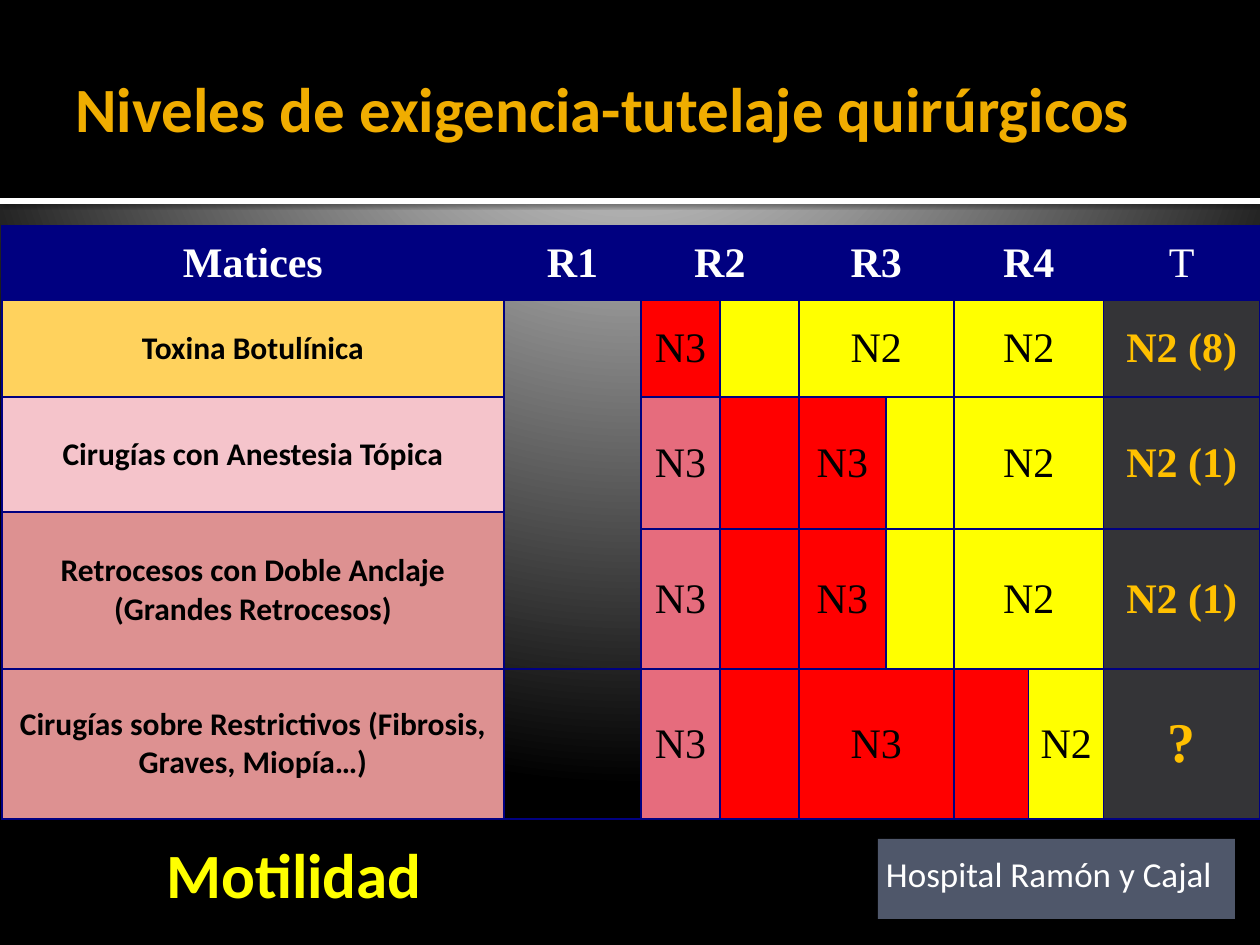
"""Build a slide with the table of surgical supervision levels by residency year."""
import pptx
import pptx.dml.color
import pptx.enum.shapes
import pptx.enum.text
import pptx.oxml
import pptx.oxml.ns
import pptx.util

RGB = pptx.dml.color.RGBColor
BLACK = RGB(0x00, 0x00, 0x00)
WHITE = RGB(0xFF, 0xFF, 0xFF)
GOLD = RGB(0xF0, 0xAD, 0x00)
AMBER = RGB(0xFF, 0xC0, 0x00)
YELLOW = RGB(0xFF, 0xFF, 0x00)
RED = RGB(0xFF, 0x00, 0x00)
ROSE = RGB(0xE6, 0x6C, 0x7D)
NAVY = RGB(0x00, 0x00, 0x80)
SAND = RGB(0xFF, 0xD2, 0x5D)
PINK = RGB(0xF5, 0xC4, 0xCB)
SALMON = RGB(0xDD, 0x91, 0x91)
CHARCOAL = RGB(0x34, 0x34, 0x37)
SLATE = RGB(0x4F, 0x57, 0x6A)
SCALE = 914400 / 126
NAMESPACE = pptx.oxml.ns.nsdecls("a")
MIDDLE = pptx.enum.text.MSO_ANCHOR.MIDDLE


def px(*lengths):
    return [pptx.util.Emu(round(length * SCALE)) for length in lengths]


def write(frame, text, size, color, bold, name="Calibri"):
    para = frame.paragraphs[0]
    para.text = text
    para.font.name = name
    para.font.size = pptx.util.Pt(size)
    para.font.bold = bold
    para.font.color.rgb = color
    return para


deck = pptx.Presentation()
deck.slide_width, deck.slide_height = px(1260, 945)
page = deck.slides.add_slide(deck.slide_layouts[6])

page.background.fill.gradient()
gradient = next(page.background._cSld.iter(pptx.oxml.ns.qn("a:gradFill")))
stops = "".join(
    f'<a:gs pos="{place * 1000}"><a:srgbClr val="{color}"/></a:gs>'
    for place, color in [(0, "C0C0C0"), (12, "C0C0C0"), (20, "BEBEBE"), (100, "000000")])
gradient.getparent().replace(gradient, pptx.oxml.parse_xml(
    f'<a:gradFill {NAMESPACE} rotWithShape="1"><a:gsLst>{stops}</a:gsLst><a:path path="circle">'
    '<a:fillToRect l="10000" t="-25000" r="10000" b="125000"/></a:path></a:gradFill>'))

panels = []
for bounds, color in [((0, 198, 1260, 6), WHITE), ((0, 0, 1260, 198), BLACK),
                      ((878, 839, 357, 80), SLATE)]:
    panel = page.shapes.add_shape(pptx.enum.shapes.MSO_SHAPE.RECTANGLE, *px(*bounds))
    panel.shadow.inherit = False
    panel.fill.solid()
    panel.fill.fore_color.rgb = color
    panel.line.fill.background()
    panels.append(panel)
rule, banner, hospital = panels

rule._element.spPr.find(pptx.oxml.ns.qn("a:effectLst")).append(pptx.oxml.parse_xml(
    f'<a:outerShdw {NAMESPACE} blurRad="31750" dist="10160" dir="5400000" rotWithShape="0">'
    '<a:srgbClr val="000000"><a:alpha val="60000"/></a:srgbClr></a:outerShdw>'))

frame = hospital.text_frame
frame.vertical_anchor = pptx.enum.text.MSO_ANCHOR.TOP
frame.margin_left, frame.margin_top = px(8, 13)
para = write(frame, "Hospital Ramón y Cajal", 20, WHITE, False)
para.alignment = pptx.enum.text.PP_ALIGN.LEFT

for bounds, text, color, anchor in [
        ((63, 21, 1134, 173), "Niveles de exigencia-tutelaje quirúrgicos", GOLD, MIDDLE),
        ((154, 829, 525, 89), "Motilidad", YELLOW, pptx.enum.text.MSO_ANCHOR.TOP)]:
    box = page.shapes.add_textbox(*px(*bounds))
    box.text_frame.word_wrap = True
    box.text_frame.vertical_anchor = anchor
    write(box.text_frame, text, 36, color, True)

widths = px(502, 137, 79, 79, 87, 68, 75, 75, 156)
heights = px(74, 97, 115, 17, 140, 150)
table = page.shapes.add_table(len(heights), len(widths), *px(2, 226, 1258, 593)).table
table.first_row = table.horz_banding = False
for column, width in zip(table.columns, widths):
    column.width = width
for row, height in zip(table.rows, heights):
    row.height = height

for cell in table.iter_cells():
    cell.margin_left, cell.margin_right, cell.margin_top, cell.margin_bottom = px(9, 9, 0, 0)
    cell.vertical_anchor = MIDDLE
    properties = cell._tc.get_or_add_tcPr()
    for side in ("lnL", "lnR", "lnT", "lnB"):
        properties.append(pptx.oxml.parse_xml(
            f'<a:{side} {NAMESPACE} w="12700"><a:solidFill><a:srgbClr val="{NAVY}"/>'
            f'</a:solidFill></a:{side}>'))
    cell.fill.background()

HEADER = (24, WHITE, True, "Times New Roman")
HEADER_LIGHT = (24, WHITE, False, "Times New Roman")
TOPIC = (18, BLACK, True, "Calibri")
LEVEL = (24, BLACK, False, "Times New Roman")
TOTAL = (24, AMBER, True, "Times New Roman")
UNKNOWN = (32, AMBER, True, "Times New Roman")
entries = [
    (0, 0, 1, 1, "Matices", NAVY, HEADER),
    (0, 1, 1, 1, "R1", NAVY, HEADER),
    (0, 2, 1, 2, "R2", NAVY, HEADER),
    (0, 4, 1, 2, "R3", NAVY, HEADER),
    (0, 6, 1, 2, "R4", NAVY, HEADER),
    (0, 8, 1, 1, "T", NAVY, HEADER_LIGHT),
    (1, 0, 1, 1, "Toxina Botulínica", SAND, TOPIC),
    (1, 1, 4, 1, "", None, LEVEL),
    (1, 2, 1, 1, "N3", RED, LEVEL),
    (1, 3, 1, 1, "", YELLOW, LEVEL),
    (1, 4, 1, 2, "N2", YELLOW, LEVEL),
    (1, 6, 1, 2, "N2", YELLOW, LEVEL),
    (1, 8, 1, 1, "N2 (8)", CHARCOAL, TOTAL),
    (2, 0, 1, 1, "Cirugías con Anestesia Tópica", PINK, TOPIC),
    (3, 0, 2, 1, "Retrocesos con Doble Anclaje (Grandes Retrocesos)", SALMON, TOPIC),
    (5, 0, 1, 1, "Cirugías sobre Restrictivos (Fibrosis, Graves, Miopía…)", SALMON, TOPIC),
    (5, 2, 1, 1, "N3", ROSE, LEVEL),
    (5, 3, 1, 1, "", RED, LEVEL),
    (5, 4, 1, 2, "N3", RED, LEVEL),
    (5, 6, 1, 1, "", RED, LEVEL),
    (5, 7, 1, 1, "N2", YELLOW, LEVEL),
    (5, 8, 1, 1, "?", CHARCOAL, UNKNOWN),
]
for top, depth in [(2, 2), (4, 1)]:
    entries += [
        (top, 2, depth, 1, "N3", ROSE, LEVEL),
        (top, 3, depth, 1, "", RED, LEVEL),
        (top, 4, depth, 1, "N3", RED, LEVEL),
        (top, 5, depth, 1, "", YELLOW, LEVEL),
        (top, 6, depth, 2, "N2", YELLOW, LEVEL),
        (top, 8, depth, 1, "N2 (1)", CHARCOAL, TOTAL),
    ]

for top, left, depth, span, text, color, style in entries:
    cell = table.cell(top, left)
    if depth * span > 1:
        cell.merge(table.cell(top + depth - 1, left + span - 1))
    if color is not None:
        cell.fill.solid()
        cell.fill.fore_color.rgb = color
    if text:
        para = write(cell.text_frame, text, *style)
        para.alignment = pptx.enum.text.PP_ALIGN.CENTER

deck.save("out.pptx")
